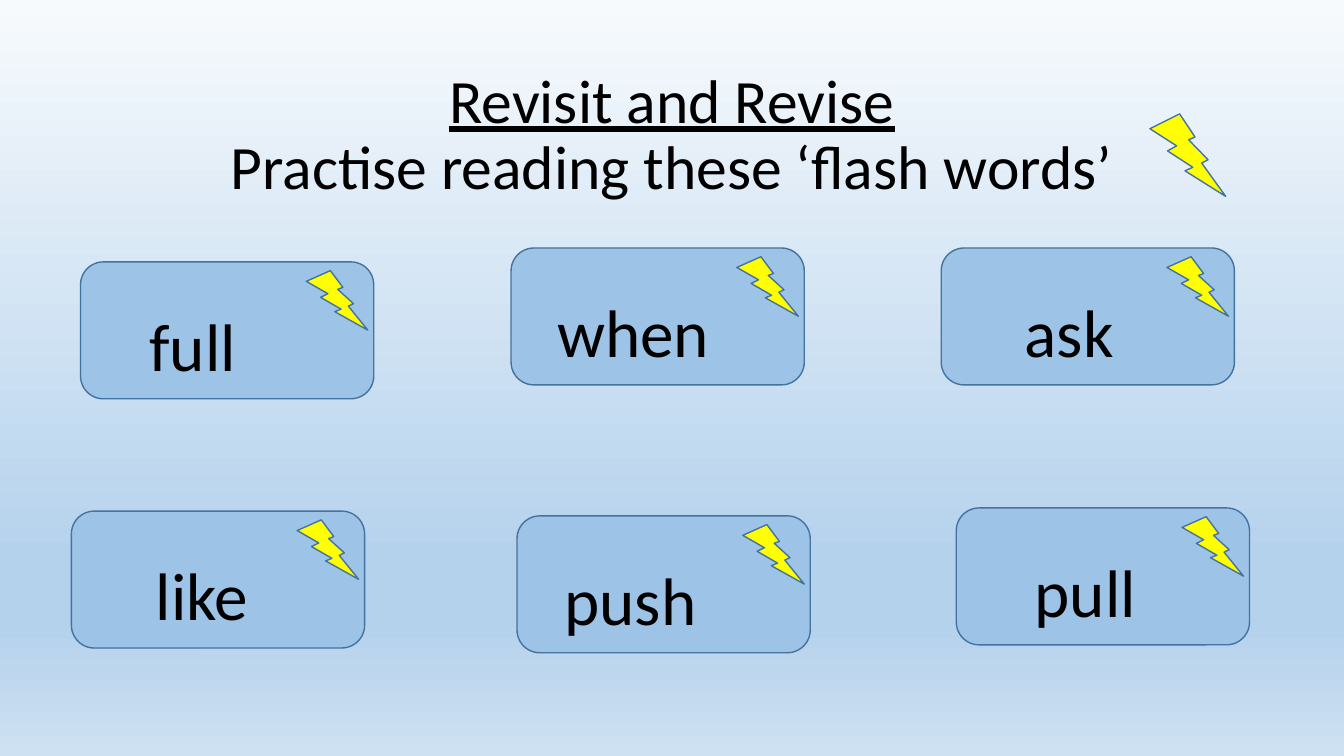
from copy import deepcopy

from pptx import Presentation
from pptx.dml.color import RGBColor
from pptx.enum.shapes import MSO_SHAPE
from pptx.enum.text import MSO_ANCHOR, MSO_AUTO_SIZE, PP_ALIGN
from pptx.oxml.ns import qn
from pptx.util import Cm, Pt

BACKGROUND = [(0, "F7FAFD"), (0.74, "B5D2EC"), (0.83, "B5D2EC"), (1, "CEE1F2")]
CARD_W, CARD_H = 7.39, 3.45
# word, card left, card top, label inset, label width (cm)
CARDS = [
    ("when", 12.88, 6.25, 0.74, 4.67),
    ("ask", 23.72, 6.25, 0.19, 6.07),
    ("like", 1.8, 12.88, 0.23, 6.12),
    ("full", 2.03, 6.6, 0.71, 4.24),
    ("push", 13.03, 13, 0.74, 4.24),
    ("pull", 24.1, 12.8, 0.2, 6.1),
]


def add_filled_shape(kind, left, top, width, height, fill):
    sp = slide.shapes.add_shape(kind, Cm(left), Cm(top), Cm(width), Cm(height))
    sp.shadow.inherit = False
    sp.fill.solid()
    sp.fill.fore_color.rgb = RGBColor.from_string(fill)
    sp.line.color.rgb = RGBColor.from_string("43739E")
    sp.line.width = Pt(1)


def format_paragraph(p, size):
    p.alignment = PP_ALIGN.CENTER
    for r in p.runs:
        r.font.name = "Calibri"
        r.font.size = Pt(size)
        r.font.color.rgb = RGBColor.from_string("000000")


prs = Presentation()
prs.slide_width, prs.slide_height = Cm(33.87), Cm(19.05)
slide = prs.slides.add_slide(prs.slide_layouts[5])

# Background gradient, running from top to bottom
fill = slide.background.fill
fill.gradient()
fill.gradient_angle = 270
stop_list = slide.element.find(".//" + qn("a:gsLst"))
while len(stop_list) < len(BACKGROUND):
    stop_list.append(deepcopy(stop_list[0]))
for stop, (position, color) in zip(fill.gradient_stops, BACKGROUND):
    stop.position = position
    stop.color.rgb = RGBColor.from_string(color)

# Title
title = slide.shapes.title
title.left, title.top, title.width, title.height = Cm(2.33), Cm(1.02), Cm(29.21), Cm(4.83)
tf = title.text_frame
tf.text = "Revisit and Revise\vPractise reading these ‘flash words’"
tf.auto_size = MSO_AUTO_SIZE.NONE
tf.vertical_anchor = MSO_ANCHOR.MIDDLE
p = tf.paragraphs[0]
p.line_spacing = 0.9
format_paragraph(p, 44)
p.runs[0].font.underline = True
add_filled_shape(MSO_SHAPE.LIGHTNING_BOLT, 28.98, 2.87, 1.91, 2.08, "FFFF00")

# Flash word cards
for word, left, top, inset, label_w in CARDS:
    add_filled_shape(MSO_SHAPE.ROUNDED_RECTANGLE, left, top, CARD_W, CARD_H, "9DC3E6")
    label = slide.shapes.add_textbox(Cm(left + inset), Cm(top + 0.94), Cm(label_w), Cm(2.31))
    tf = label.text_frame
    tf.word_wrap = True
    tf.auto_size = MSO_AUTO_SIZE.SHAPE_TO_FIT_TEXT
    tf.text = word
    format_paragraph(tf.paragraphs[0], 48)
    add_filled_shape(MSO_SHAPE.LIGHTNING_BOLT, left + 5.69, top + 0.22, 1.55, 1.5, "FFFF00")

prs.save("out.pptx")
